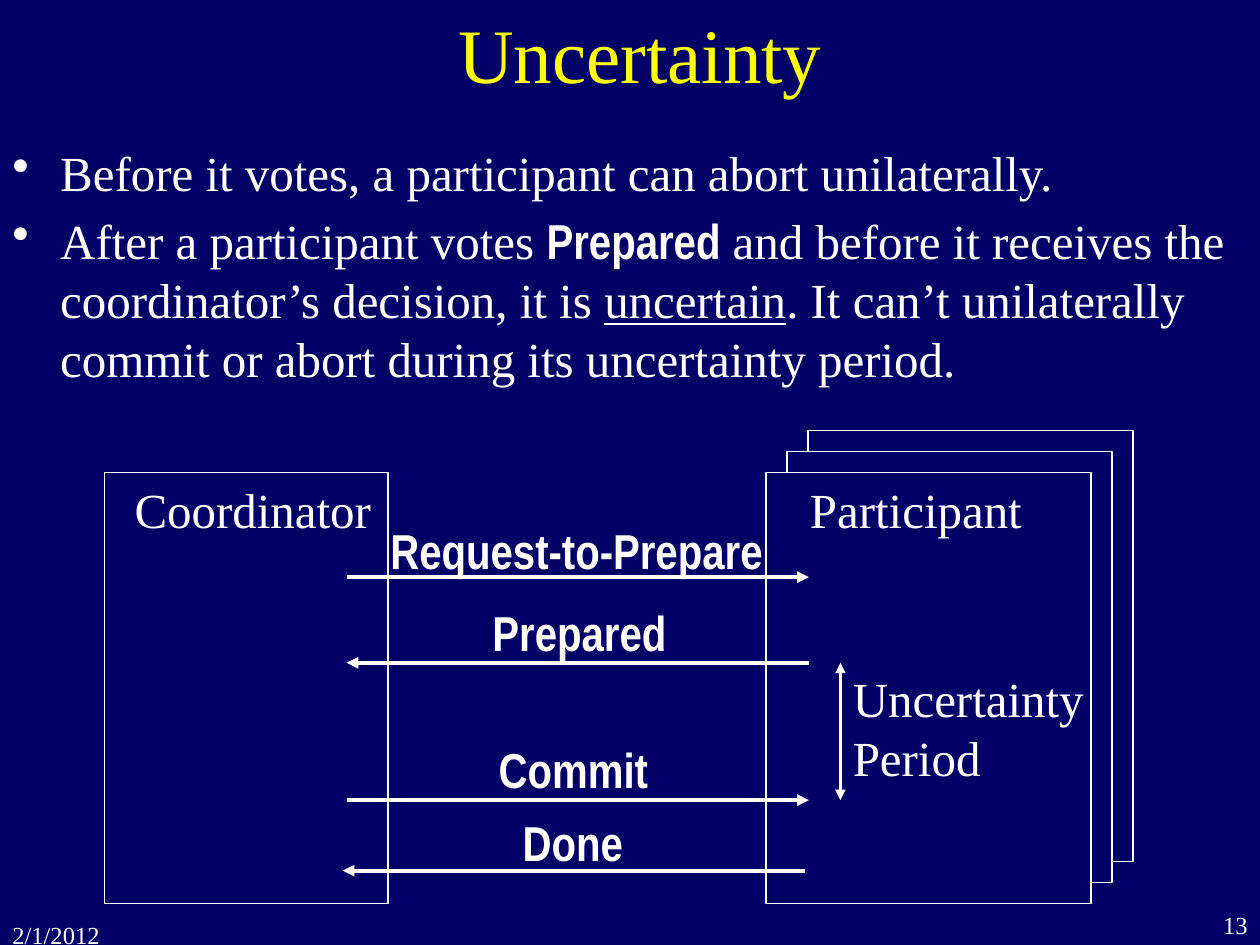
from lxml import etree
from pptx import Presentation
from pptx.dml.color import RGBColor
from pptx.enum.shapes import MSO_CONNECTOR, MSO_SHAPE
from pptx.enum.text import MSO_ANCHOR, MSO_AUTO_SIZE, PP_ALIGN
from pptx.oxml.ns import qn
from pptx.util import Inches, Pt

NAVY = RGBColor(0, 0, 0x66)
WHITE = RGBColor(255, 255, 255)
YELLOW = RGBColor(255, 255, 0)
SERIF, NARROW = "Times New Roman", "Arial Narrow"
RECT, LINE = MSO_SHAPE.RECTANGLE, MSO_CONNECTOR.STRAIGHT
LEFT, MID, RIGHT = PP_ALIGN.LEFT, PP_ALIGN.CENTER, PP_ALIGN.RIGHT
TOP, CENTER = MSO_ANCHOR.TOP, MSO_ANCHOR.MIDDLE
GROW, FIXED = MSO_AUTO_SIZE.SHAPE_TO_FIT_TEXT, MSO_AUTO_SIZE.NONE

BOLD = {"font": NARROW, "bold": True}
POINTS = [
    ["Before it votes, a participant can abort unilaterally."],
    ["After a participant votes ", ("Prepared", BOLD),
     " and before it receives the coordinator’s decision, it is ",
     ("uncertain", {"under": True}),
     ". It can’t unilaterally commit or abort during its uncertainty period."],
]
LABELS = [
    ("Coordinator", 0.97, 3.76, 2.08, {}),
    ("Participant", 6.33, 3.76, 1.88, {}),
    ("Request-to-Prepare", 3, 4.08, 3.16, BOLD),
    ("Prepared", 3.81, 4.73, 1.58, BOLD),
    ("Commit", 3.86, 5.82, 1.39, BOLD),
    ("Done", 4.05, 6.4, 1, BOLD),
]
NEAR, FAR, SPAN = 2.75, 6.42, 6.67
VOTE, COMMIT = 5.26, 6.35
ARROWS = [
    (NEAR, 4.58, FAR, 4.58),
    (NEAR, COMMIT, FAR, COMMIT),
    (FAR, VOTE, NEAR, VOTE),
    (FAR - 0.03, 6.91, NEAR - 0.03, 6.91),
]
BASE, TALL, STEP, DEPTH = 3.75, 3.42, 1 / 6, 3

deck = Presentation()
deck.slide_width, deck.slide_height = Inches(10), Inches(7.5)
slide = deck.slides.add_slide(deck.slide_layouts[6])
slide.background.fill.solid()
slide.background.fill.fore_color.rgb = NAVY


def write(paras, x, y, w, h, size=28, color=WHITE, font=SERIF, bold=False,
          align=LEFT, anchor=TOP, wrap=True, bullet=False):
    box = slide.shapes.add_textbox(*map(Inches, (x, y, w, h)))
    frame = box.text_frame
    frame.word_wrap, frame.vertical_anchor = wrap, anchor
    frame.auto_size = FIXED if wrap else GROW
    for num, parts in enumerate(paras):
        para = frame.paragraphs[0] if num == 0 else frame.add_paragraph()
        para.alignment = align
        if bullet:
            para.space_before = Pt(size * 0.2)
            props = para._p.get_or_add_pPr()
            props.set("marL", str(Inches(0.38)))
            props.set("indent", str(Inches(-0.38)))
            etree.SubElement(props, qn("a:buChar"), char="•")
        for part in parts:
            text, look = (part, {}) if isinstance(part, str) else part
            run = para.add_run()
            run.text = text
            run.font.size, run.font.color.rgb = Pt(size), color
            run.font.name = look.get("font", font)
            run.font.bold = look.get("bold", bold)
            run.font.underline = look.get("under", False)


def panel(x, y, w, filled=True):
    box = slide.shapes.add_shape(RECT, *map(Inches, (x, y, w, TALL)))
    box.shadow.inherit = False
    if filled:
        box.fill.solid()
        box.fill.fore_color.rgb = NAVY
    else:
        box.fill.background()
    box.line.color.rgb, box.line.width = WHITE, Pt(0.75)


def arrow(ends, width=2.25, heads=("tailEnd",)):
    link = slide.shapes.add_connector(LINE, *map(Inches, ends))
    link.line.color.rgb, link.line.width = WHITE, Pt(width)
    stroke = link.line._get_or_add_ln()
    for head in heads:
        etree.SubElement(stroke, qn("a:" + head), type="triangle")
    etree.SubElement(link._element.spPr, qn("a:effectLst"))


write([["2/1/2012"]], 0, 7.25, 1, 0.25, size=14)
write([["13"]], 9.08, 7.17, 0.92, 0.33, size=14, align=RIGHT)
write([["Uncertainty"]], 0.83, 0, 8.5, 0.83, size=44, color=YELLOW,
      align=MID, anchor=CENTER)
write(POINTS, 0, 1.08, 10, 2.17, bullet=True)

for back in reversed(range(DEPTH)):
    panel(6.08 + back * STEP, BASE - back * STEP, 2.58)
panel(0.83, BASE, 2.25, filled=False)

for text, x, y, w, look in LABELS:
    write([[text]], x, y, w, 0.57, wrap=False, **look)
for ends in ARROWS:
    arrow(ends)
arrow((SPAN, VOTE, SPAN, COMMIT), 1.75, ("headEnd", "tailEnd"))
write([["Uncertainty"], ["Period"]], SPAN, VOTE, 2.03, 1.03, wrap=False)

deck.save("out.pptx")
